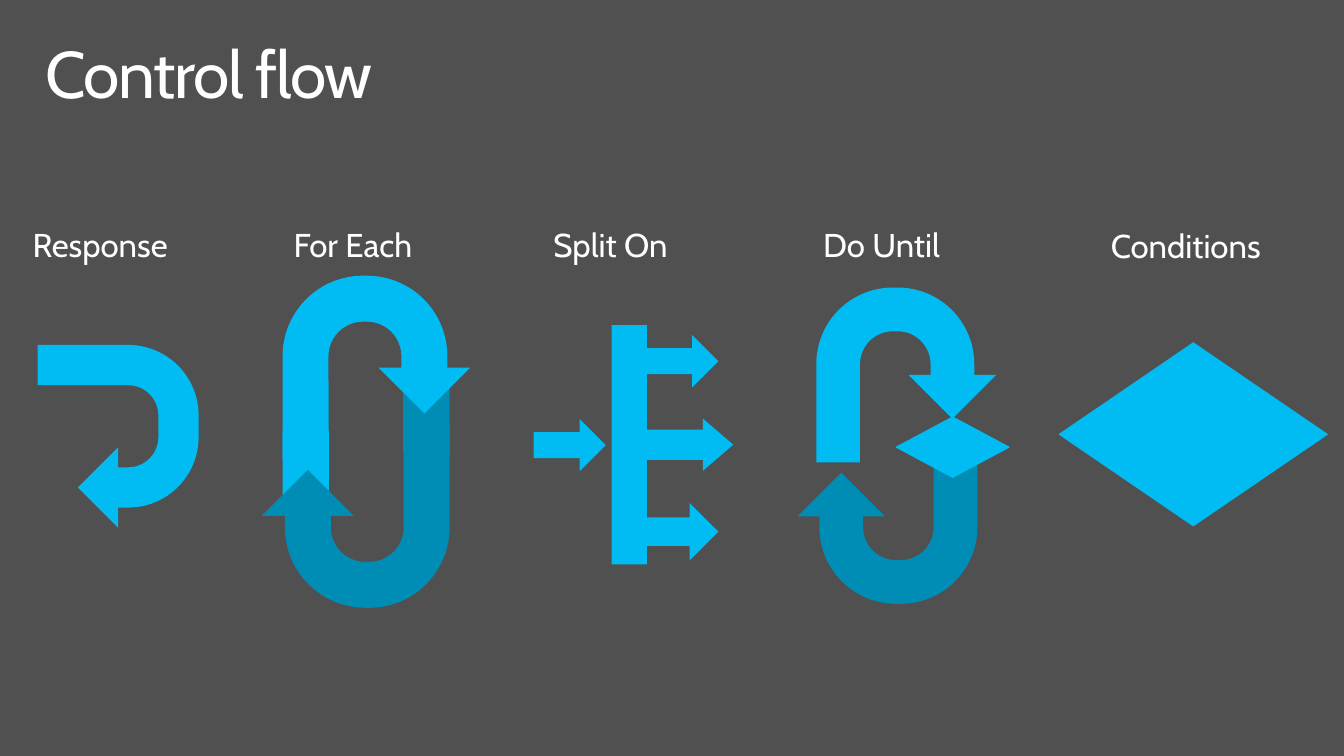
from pptx import Presentation
from pptx.dml.color import RGBColor
from pptx.enum.shapes import MSO_SHAPE
from pptx.enum.text import MSO_ANCHOR, MSO_AUTO_SIZE
from pptx.util import Inches, Pt

PX = Inches(1) // 100  # 100 px to the inch
SLIDE_SIZE = (1360, 765)

BACKGROUND = RGBColor(0x50, 0x50, 0x50)
WHITE = RGBColor(0xFF, 0xFF, 0xFF)
BRIGHT = RGBColor(0x00, 0xBC, 0xF2)
DEEP = RGBColor(0x00, 0x8D, 0xB5)
FONT = "Cabin"

TITLE = ("Control flow", (30, 32, 770, 58))
LABEL_SIZE = (208, 69)
LABELS = [  # text, left, top
    ("Response", 13, 216),
    ("For Each", 277, 216),
    ("Split On", 540, 216),
    ("Do Until", 813, 216),
    ("Conditions", 1104, 217),
]

UTURN = MSO_SHAPE.U_TURN_ARROW
ARROW = MSO_SHAPE.RIGHT_ARROW
SPLITTER = MSO_SHAPE.RIGHT_ARROW_CALLOUT
BAR = MSO_SHAPE.RECTANGLE
DIAMOND = MSO_SHAPE.DIAMOND
SPLITTER_ADJUSTMENTS = (0.25, 0.215, 0.25, 0.29)

# kind, (left, top, width, height), colour, rotation; back to front
ICONS = {
    "Response": [(UTURN, (27, 360, 185, 163), BRIGHT, 90)],
    "For Each": [
        (BAR, (408, 391, 47, 67), DEEP, 0),
        (BAR, (286, 436, 47, 67), BRIGHT, 0),
        (UTURN, (286, 279, 190, 186), BRIGHT, 0),
        (UTURN, (265, 429, 190, 186), DEEP, 180),
    ],
    "Split On": [
        (SPLITTER, (619, 329, 123, 242), BRIGHT, 0),
        (ARROW, (654, 339, 73, 53), BRIGHT, 0),
        (ARROW, (654, 509, 73, 58), BRIGHT, 0),
        (ARROW, (540, 424, 73, 53), BRIGHT, 0),
    ],
    "Do Until": [
        (UTURN, (826, 291, 182, 177), BRIGHT, 0),
        (UTURN, (807, 434, 182, 177), DEEP, 180),
        (DIAMOND, (907, 422, 114, 61), BRIGHT, 0),
    ],
    "Conditions": [(DIAMOND, (1072, 347, 271, 185), BRIGHT, 0)],
}


def emu(lengths):
    return [length * PX for length in lengths]


def add_text(slide, text, box, *, size, inset, spacing=0, after=0, grow=False):
    """Add one line of text; inset is (horizontal, vertical) in px."""
    holder = slide.shapes.add_textbox(*emu(box))
    frame = holder.text_frame
    frame.word_wrap = True
    frame.auto_size = MSO_AUTO_SIZE.SHAPE_TO_FIT_TEXT if grow else MSO_AUTO_SIZE.NONE
    frame.vertical_anchor = MSO_ANCHOR.TOP
    frame.margin_left = frame.margin_right = inset[0] * PX
    frame.margin_top = frame.margin_bottom = inset[1] * PX
    paragraph = frame.paragraphs[0]
    paragraph.line_spacing = 0.9
    paragraph.space_after = Pt(after)
    run = paragraph.add_run()
    run.text = text
    run.font.name = FONT
    run.font.size = Pt(size)
    run.font.color.rgb = WHITE
    if spacing:
        run.font._element.set("spc", str(spacing * 100))


def add_icon_part(slide, kind, box, colour, rotation):
    part = slide.shapes.add_shape(kind, *emu(box))
    part.shadow.inherit = False
    part.rotation = rotation
    part.fill.solid()
    part.fill.fore_color.rgb = colour
    if kind == DIAMOND:
        part.line.color.rgb = colour
        part.line.width = Pt(0.85)
    else:
        part.line.fill.background()
    if kind == SPLITTER:
        for index, value in enumerate(SPLITTER_ADJUSTMENTS):
            part.adjustments[index] = value


def main():
    deck = Presentation()
    deck.slide_width, deck.slide_height = emu(SLIDE_SIZE)
    slide = deck.slides.add_slide(deck.slide_layouts[6])
    slide.background.fill.solid()
    slide.background.fill.fore_color.rgb = BACKGROUND

    add_text(slide, *TITLE, size=48, inset=(16, 10), spacing=-1)
    for label, left, top in LABELS:
        add_text(slide, label, (left, top, *LABEL_SIZE),
                 size=24, inset=(20, 16), after=6, grow=True)
        for part in ICONS[label]:
            add_icon_part(slide, *part)

    deck.save("out.pptx")


if __name__ == "__main__":
    main()
